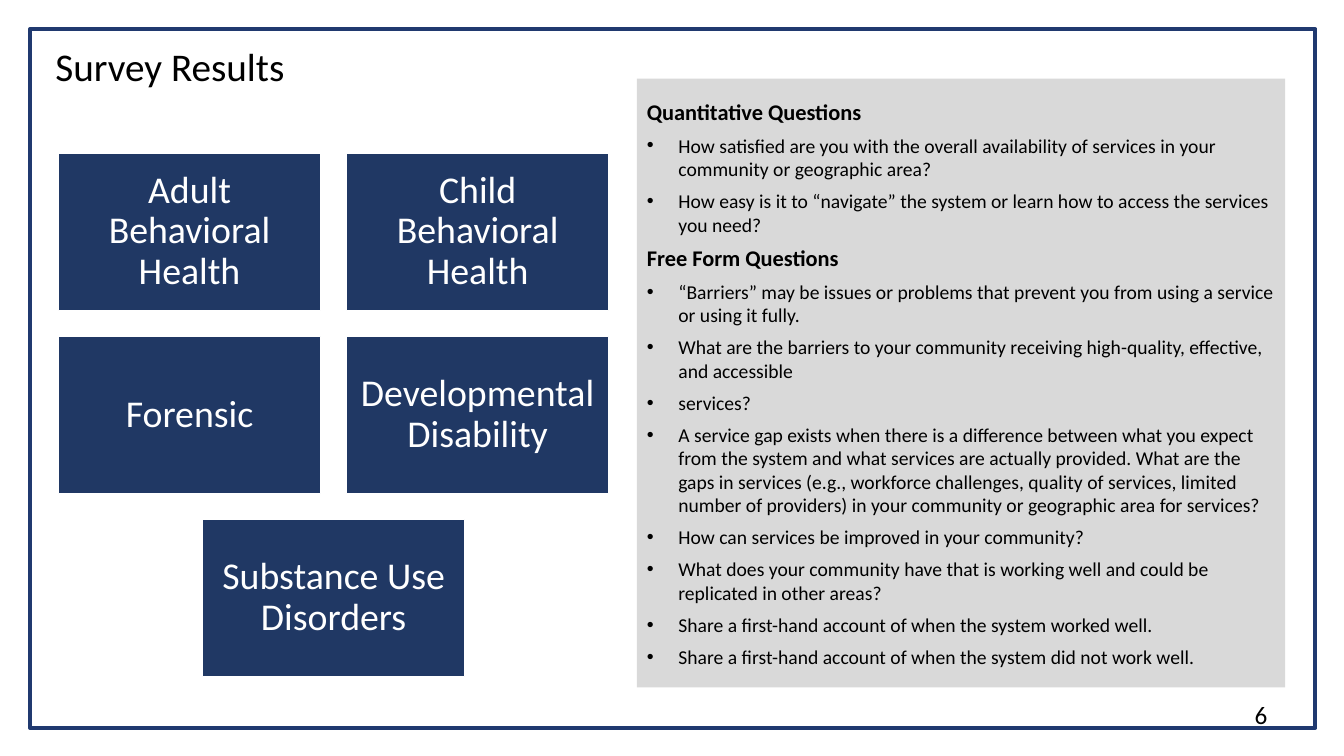
from dataclasses import dataclass

from lxml import etree
from pptx import Presentation
from pptx.dml.color import RGBColor
from pptx.enum import shapes, text
from pptx.oxml import ns
from pptx.util import Pt

NAVY = RGBColor(0x20, 0x38, 0x64)
FRAME_BLUE = RGBColor(0x20, 0x39, 0x6F)
GRAY = RGBColor(0xD9, 0xD9, 0xD9)
WHITE = RGBColor(0xFF, 0xFF, 0xFF)
BLACK = RGBColor(0, 0, 0)
FONT = "Calibri"

BOX_W, BOX_H = 187.2, 112.3
GAP_X, GAP_Y = 18.6, 18.5
GRID_LEFT, GRID_TOP = 41.8, 109.4
BULLET_INDENT = 22.5


@dataclass(frozen=True)
class Box:
    left: float
    top: float
    width: float
    height: float


@dataclass(frozen=True)
class Section:
    heading: str
    questions: tuple[str, ...]


AUDIENCE_ROWS = (
    ("Adult Behavioral Health", "Child Behavioral Health"),
    ("Forensic", "Developmental Disability"),
    ("Substance Use Disorders",),
)

SECTIONS = (
    Section("Quantitative Questions", (
        "How satisfied are you with the overall availability of services in your "
        "community or geographic area?",
        "How easy is it to “navigate” the system or learn how to access the services "
        "you need?",
    )),
    Section("Free Form Questions", (
        "“Barriers” may be issues or problems that prevent you from using a service "
        "or using it fully.",
        "What are the barriers to your community receiving high-quality, effective, "
        "and accessible",
        "services?",
        "A service gap exists when there is a difference between what you expect from "
        "the system and what services are actually provided. What are the gaps in "
        "services (e.g., workforce challenges, quality of services, limited number of "
        "providers) in your community or geographic area for services?",
        "How can services be improved in your community?",
        "What does your community have that is working well and could be replicated "
        "in other areas?",
        "Share a first-hand account of when the system worked well.",
        "Share a first-hand account of when the system did not work well.",
    )),
)


def add_run(p, words: str, size: float, color: RGBColor, bold: bool = False) -> None:
    r = p.add_run()
    r.text = words
    r.font.name = FONT
    r.font.size = Pt(size)
    r.font.bold = bold
    r.font.color.rgb = color


def set_frame(tf, inset: float, anchor) -> None:
    tf.word_wrap = True
    tf.auto_size = text.MSO_AUTO_SIZE.NONE
    tf.vertical_anchor = anchor
    tf.margin_left = tf.margin_right = Pt(inset)
    tf.margin_top = tf.margin_bottom = Pt(inset)


def add_rect(s, box: Box, fill: RGBColor | None = None,
             line: RGBColor | None = None, line_width: float = 1):
    sp = s.shapes.add_shape(shapes.MSO_SHAPE.RECTANGLE, Pt(box.left), Pt(box.top),
                            Pt(box.width), Pt(box.height))
    sp.shadow.inherit = False
    if fill is None:
        sp.fill.background()
    else:
        sp.fill.solid()
        sp.fill.fore_color.rgb = fill
    if line is None:
        sp.line.fill.background()
    else:
        sp.line.color.rgb = line
        sp.line.width = Pt(line_width)
    return sp


def add_title(s, box: Box, words: str) -> None:
    sp = s.shapes.title
    sp.left, sp.top = Pt(box.left), Pt(box.top)
    sp.width, sp.height = Pt(box.width), Pt(box.height)
    set_frame(sp.text_frame, 7.2, text.MSO_ANCHOR.TOP)
    p = sp.text_frame.paragraphs[0]
    p.alignment = text.PP_ALIGN.LEFT
    p.line_spacing = 0.9
    add_run(p, words, 28, BLACK)


def add_page_number(s, box: Box, number: str) -> None:
    sp = s.shapes.add_textbox(Pt(box.left), Pt(box.top), Pt(box.width), Pt(box.height))
    set_frame(sp.text_frame, 7.2, text.MSO_ANCHOR.MIDDLE)
    add_run(sp.text_frame.paragraphs[0], number, 18, BLACK)


def add_bullet(p) -> None:
    pPr = p._p.get_or_add_pPr()
    pPr.set("marL", str(Pt(BULLET_INDENT)))
    pPr.set("indent", str(-Pt(BULLET_INDENT)))
    etree.SubElement(pPr, ns.qn("a:buFont"), typeface="Arial")
    etree.SubElement(pPr, ns.qn("a:buChar"), char="•")


def add_question_panel(s, box: Box) -> None:
    tf = add_rect(s, box, GRAY).text_frame
    set_frame(tf, 7.2, text.MSO_ANCHOR.MIDDLE)
    tf.margin_top = tf.margin_bottom = Pt(3.6)
    lines = [(words, words == section.heading)
             for section in SECTIONS
             for words in (section.heading, *section.questions)]
    for i, (words, is_heading) in enumerate(lines):
        p = tf.add_paragraph() if i else tf.paragraphs[0]
        p.alignment = text.PP_ALIGN.LEFT
        p.space_before = Pt(3 if i else 0)
        p.space_after = Pt(3)
        if not is_heading:
            add_bullet(p)
        add_run(p, words, 16 if is_heading else 14, BLACK, is_heading)


def add_audience_grid(s) -> None:
    columns = max(len(row) for row in AUDIENCE_ROWS)
    for i, row in enumerate(AUDIENCE_ROWS):
        row_left = GRID_LEFT + (columns - len(row)) * (BOX_W + GAP_X) / 2
        for j, words in enumerate(row):
            box = Box(row_left + j * (BOX_W + GAP_X),
                      GRID_TOP + i * (BOX_H + GAP_Y), BOX_W, BOX_H)
            tf = add_rect(s, box, NAVY, WHITE).text_frame
            set_frame(tf, 8, text.MSO_ANCHOR.MIDDLE)
            p = tf.paragraphs[0]
            p.alignment = text.PP_ALIGN.CENTER
            p.line_spacing = 0.9
            add_run(p, words, 27, WHITE)


def main() -> None:
    prs = Presentation()
    prs.slide_width, prs.slide_height = Pt(960), Pt(540)
    s = prs.slides.add_slide(prs.slide_layouts[5])
    add_rect(s, Box(21.6, 20.9, 918, 499), line=FRAME_BLUE, line_width=3)
    add_title(s, Box(32.4, 26.6, 894.2, 60.5), "Survey Results")
    add_page_number(s, Box(889.2, 489.6, 57.6, 41), "6")
    add_question_panel(s, Box(455, 56.2, 463, 434.9))
    add_audience_grid(s)
    prs.save("out.pptx")


if __name__ == "__main__":
    main()
